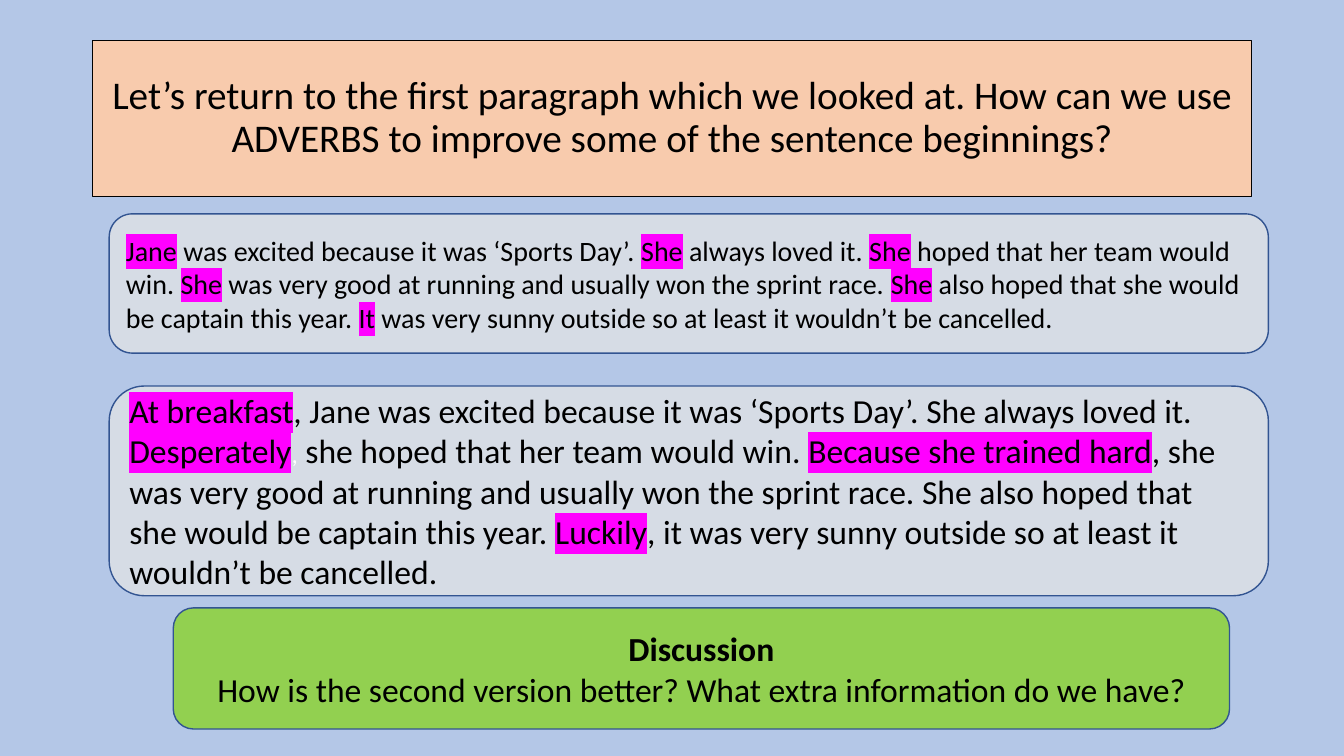
"""Build a slide on improving sentence beginnings with adverbs."""
from lxml.etree import SubElement
from pptx import Presentation
from pptx.dml.color import RGBColor
from pptx.enum.shapes import MSO_SHAPE as Preset
from pptx.enum.text import MSO_ANCHOR as Anchor, PP_ALIGN as Align
from pptx.oxml.ns import qn
from pptx.util import Pt

SKY = RGBColor(0xB4, 0xC7, 0xE7)
PEACH = RGBColor(0xF8, 0xCB, 0xAD)
GREY = RGBColor(0xD6, 0xDC, 0xE5)
GREEN = RGBColor(0x92, 0xD0, 0x50)
NAVY = RGBColor(0x32, 0x54, 0x91)
MAGENTA = RGBColor(0xFF, 0x00, 0xFF)
BLACK = RGBColor(0x00, 0x00, 0x00)
WHITE = RGBColor(0xFF, 0xFF, 0xFF)

MARK = {"highlight": MAGENTA}
FAINT = {"size": 18, "color": WHITE}

TITLE = ("Let’s return to the first paragraph which we looked at. "
         "How can we use ADVERBS to improve some of the sentence beginnings?")
FIRST_VERSION = [
    ("Jane", MARK), (" was excited because it was ‘Sports Day’. ", {}),
    ("She", MARK), (" always loved it. ", {}),
    ("She", MARK), (" hoped that her team would win. ", {}),
    ("She", MARK), (" was very good at running and usually won the sprint race. ", {}),
    ("She", MARK), (" also hoped that she would be captain this year. ", {}),
    ("It", MARK), (" was very sunny outside so at least it wouldn’t be cancelled.", {}),
]
SECOND_VERSION = [
    ("At breakfast", MARK),
    (", Jane was excited because it was ‘Sports Day’. She always loved it. ", {}),
    ("Desperately", MARK), (",", FAINT), (" she hoped that her team would win. ", {}),
    ("Because she trained hard", MARK),
    (", she was very good at running and usually won the sprint race. "
     "She also hoped that she would be captain this year. ", {}),
    ("Luckily", MARK),
    (", it was very sunny outside so at least it wouldn’t be cancelled.", {}),
]
DISCUSSION = [
    [("Discussion", {"bold": True})],
    [("How is the second version better? What extra information do we have?", {})],
]


def write_text(paragraph, text, size=24, color=BLACK, bold=False, highlight=None):
    """Add one formatted run to a paragraph."""
    run = paragraph.add_run()
    run.text = text
    font = run.font
    font.size, font.bold = Pt(size), bold
    font.color.rgb = color
    if highlight is not None:
        mark = SubElement(run._r.get_or_add_rPr(), qn("a:highlight"))
        SubElement(mark, qn("a:srgbClr"), val=str(highlight))
    font.name = "Calibri"


class LessonSlide:
    """Hold the outline style and the current slide."""

    def __init__(self, presentation, background):
        """Add a blank slide with a plain background."""
        self.outline = NAVY
        self.slide = presentation.slides.add_slide(presentation.slide_layouts[6])
        self.slide.background.fill.solid()
        self.slide.background.fill.fore_color.rgb = background

    def add_panel(self, preset, box, fill, paragraphs, size=24, align=Align.LEFT,
                  line=None, line_width=1, spacing=None):
        """Add a filled shape with its paragraphs of runs."""
        shape = self.slide.shapes.add_shape(preset, *map(Pt, box))
        shape.shadow.inherit = False
        shape.fill.solid()
        shape.fill.fore_color.rgb = fill
        shape.line.color.rgb = self.outline if line is None else line
        shape.line.width = Pt(line_width)
        frame = shape.text_frame
        frame.word_wrap = True
        frame.vertical_anchor = Anchor.MIDDLE
        for index, runs in enumerate(paragraphs):
            paragraph = frame.add_paragraph() if index else frame.paragraphs[0]
            paragraph.alignment = align
            paragraph.line_spacing = spacing
            for text, style in runs:
                write_text(paragraph, text, **{"size": size, **style})

    def add_title(self, box, text):
        """Add the title banner."""
        self.add_panel(Preset.RECTANGLE, box, PEACH, [[(text, {})]], size=28,
                       align=Align.CENTER, line=BLACK, line_width=0.75, spacing=0.9)

    def add_card(self, box, fill, paragraphs, **style):
        """Add a rounded card."""
        self.add_panel(Preset.ROUNDED_RECTANGLE, box, fill, paragraphs, **style)


def main():
    """Build and save the presentation."""
    presentation = Presentation()
    presentation.slide_width, presentation.slide_height = Pt(960), Pt(540)
    lesson = LessonSlide(presentation, SKY)
    lesson.add_title((66, 28.75, 828, 111.5), TITLE)
    lesson.add_card((78, 152.75, 828, 99.5), GREY, [FIRST_VERSION], size=20)
    lesson.add_card((78, 275.75, 828, 149.75), GREY, [SECOND_VERSION])
    lesson.add_card((123.75, 434.25, 754.5, 86.5), GREEN, DISCUSSION, align=Align.CENTER)
    presentation.save("out.pptx")


if __name__ == "__main__":
    main()
